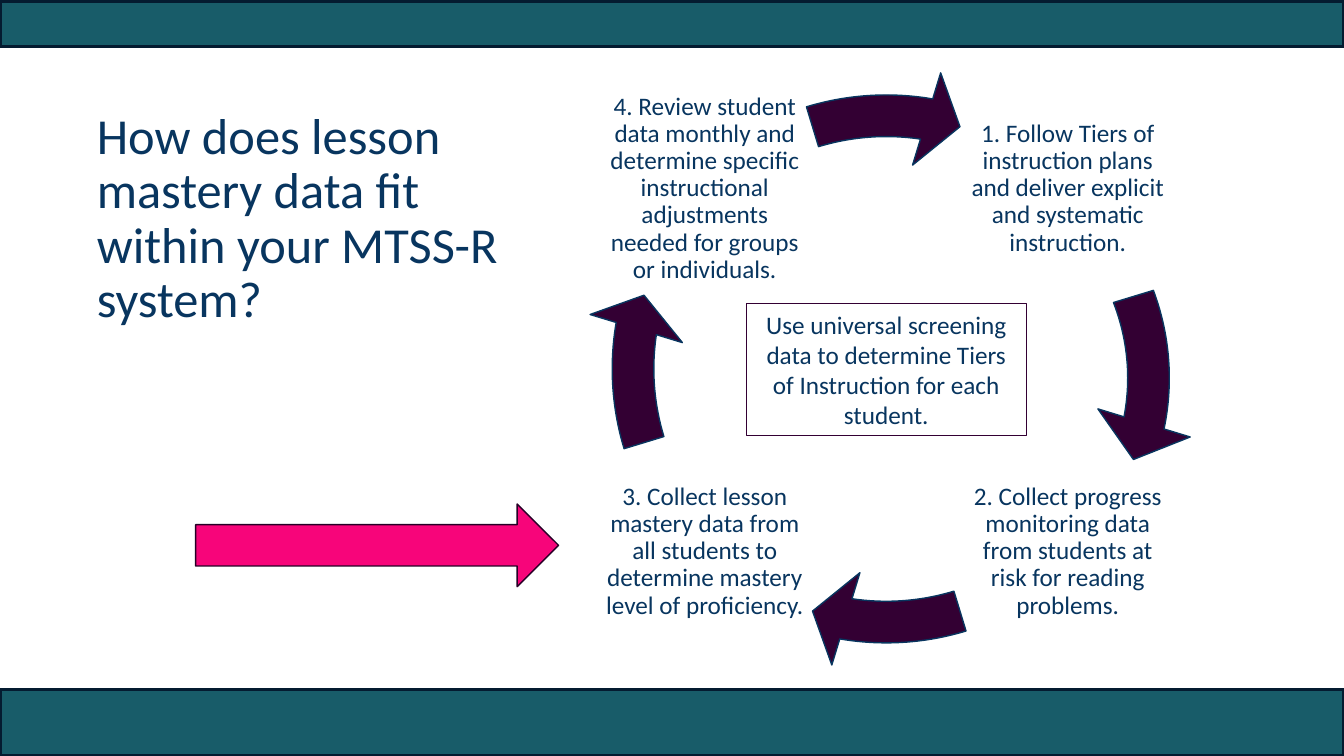
from pptx import Presentation
from pptx import util as u
from pptx.dml.color import RGBColor
from pptx.enum import shapes, text

NAVY = "08355F"
PLUM = "330033"


def paint(sp, fill, line, width):
    sp.shadow.inherit = False
    if fill:
        sp.fill.solid()
        sp.fill.fore_color.rgb = RGBColor.from_string(fill)
    else:
        sp.fill.background()
    sp.line.color.rgb = RGBColor.from_string(line)
    sp.line.width = u.Pt(width)


def write(sp, words, size=18, align=text.PP_ALIGN.CENTER, anchor=text.MSO_ANCHOR.MIDDLE, spacing=0.9, inset=None):
    tf = sp.text_frame
    tf.word_wrap = True
    tf.auto_size = text.MSO_AUTO_SIZE.NONE
    tf.vertical_anchor = anchor
    if inset is not None:
        tf.margin_left = tf.margin_right = tf.margin_top = tf.margin_bottom = u.Inches(inset)
    p = tf.paragraphs[0]
    p.alignment = align
    p.line_spacing = spacing
    r = p.add_run()
    r.text = words
    r.font.size = u.Pt(size)
    r.font.name = "Calibri"
    r.font.color.rgb = RGBColor.from_string(NAVY)


prs = Presentation()
prs.slide_width, prs.slide_height = u.Inches(13.33), u.Inches(7.5)
s = prs.slides.add_slide(prs.slide_layouts[5])

for top, height in [(6.84, 0.66), (0.01, 0.45)]:
    band = s.shapes.add_shape(shapes.MSO_SHAPE.RECTANGLE, 0, u.Inches(top), prs.slide_width, u.Inches(height))
    paint(band, "185C69", "041B30", 2.5)

title = s.shapes.title
title.left, title.top, title.width, title.height = [u.Inches(v) for v in (0.86, 1.05, 4.23, 2.44)]
write(title, "How does lesson mastery data fit within your MTSS-R system?", size=36,
      align=text.PP_ALIGN.LEFT, anchor=text.MSO_ANCHOR.TOP)

steps = [
    (9.53, 0.81, "1. Follow Tiers of instruction plans and deliver explicit and systematic instruction."),
    (9.53, 4.41, "2. Collect progress monitoring data from students at risk for reading problems."),
    (5.93, 4.41, "3. Collect lesson mastery data from all students to determine mastery level of proficiency."),
    (5.93, 0.81, "4. Review student data monthly and determine specific instructional adjustments "
                 "needed for groups or individuals."),
]
for i, (left, top, words) in enumerate(steps):
    label = s.shapes.add_textbox(u.Inches(left), u.Inches(top), u.Inches(2.12), u.Inches(2.12))
    write(label, words, inset=0.03)

    box = (5.3, 0.76, 6.57, 5.98) if i == 0 else (5.8, 0.67, 5.98, 5.98)
    arrow = s.shapes.add_shape(shapes.MSO_SHAPE.CIRCULAR_ARROW, *[u.Inches(v) for v in box])
    paint(arrow, PLUM, NAVY, 1)
    head = 5.504 + 54 * i
    tail = (205.845 + 54 * i) % 216
    for n, value in enumerate([0.069, 4.651, head, tail, 0.08]):
        arrow.adjustments[n] = value

screening = s.shapes.add_shape(shapes.MSO_SHAPE.RECTANGLE, u.Inches(7.4), u.Inches(3.01), u.Inches(2.78), u.Inches(1.31))
paint(screening, None, PLUM, 0.75)
write(screening, "Use universal screening data to determine Tiers of Instruction for each student.", spacing=1.0)

pointer = s.shapes.add_shape(shapes.MSO_SHAPE.RIGHT_ARROW, u.Inches(1.94), u.Inches(5), u.Inches(3.6), u.Inches(0.82))
paint(pointer, "F7057A", "260026", 1)

prs.save("out.pptx")
